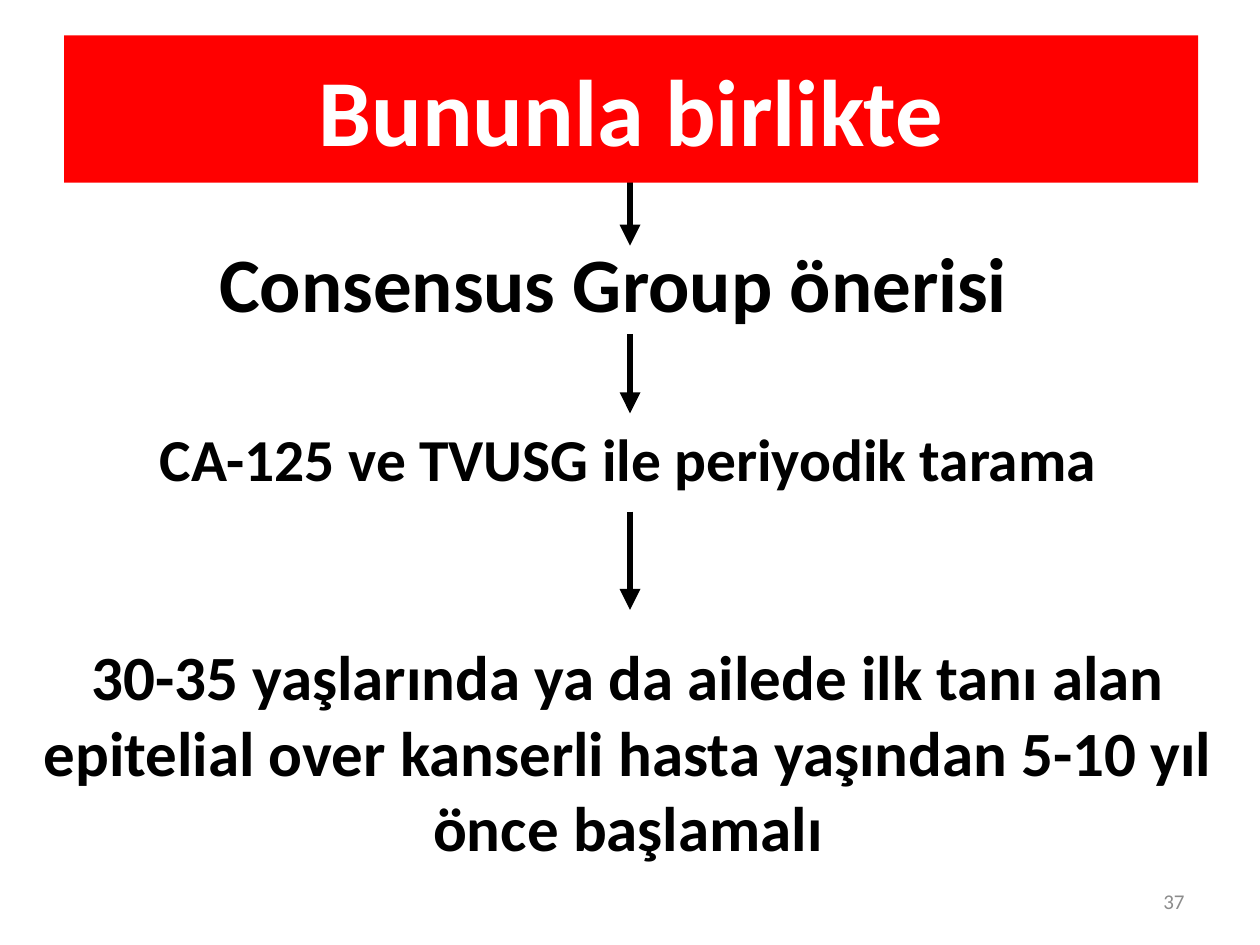
from lxml import etree
from pptx import Presentation
from pptx.dml.color import RGBColor
from pptx.enum.shapes import MSO_CONNECTOR as LINE
from pptx.enum.text import MSO_ANCHOR as ANCHOR, MSO_AUTO_SIZE as FIT, PP_ALIGN as ALIGN
from pptx.oxml.ns import qn
from pptx.util import Inches, Pt

RED = RGBColor(0xFF, 0, 0)
WHITE = RGBColor(0xFF, 0xFF, 0xFF)
BLACK = RGBColor(0, 0, 0)
GRAY = RGBColor(0x8C, 0x8C, 0x8C)

TITLE = "Bununla birlikte"
TITLE_BOX = (0.51, 0.28, 9, 1.17)
MID = 5  # x of the arrows
ARROWS = [(1.4, 1.95), (2.65, 3.28), (4.06, 4.84)]
# text, box, format
STEPS = [
    ("Consensus Group önerisi", (1.64, 1.82, 6.72, 0.84),
     dict(size=44, fit=FIT.SHAPE_TO_FIT_TEXT)),
    ("CA-125 ve TVUSG ile periyodik tarama", (1.17, 3.3, 7.72, 0.67),
     dict(size=34, wrap=False, fit=FIT.SHAPE_TO_FIT_TEXT)),
    ("30-35 yaşlarında ya da ailede ilk tanı alan epitelial over kanserli "
     "hasta yaşından 5-10 yıl önce başlamalı", (0.16, 5.01, 9.65, 1.92),
     dict(size=36, align=ALIGN.CENTER, fit=FIT.SHAPE_TO_FIT_TEXT)),
    ("37", (7.17, 6.95, 2.33, 0.4),
     dict(size=12, color=GRAY, bold=False, align=ALIGN.RIGHT, anchor=ANCHOR.MIDDLE)),
]


def write(shape, text, size, color=BLACK, bold=True, align=ALIGN.LEFT,
          anchor=ANCHOR.TOP, wrap=True, fit=FIT.NONE):
    frame = shape.text_frame
    frame.text = text
    frame.word_wrap = wrap
    frame.auto_size = fit
    frame.vertical_anchor = anchor
    para = frame.paragraphs[0]
    para.alignment = align
    font = para.runs[0].font
    font.name = "Calibri"
    font.size = Pt(size)
    font.bold = bold
    font.color.rgb = color


def add_arrow(shapes, top, end):
    arrow = shapes.add_connector(LINE.STRAIGHT, Inches(MID), Inches(top),
                                 Inches(MID), Inches(end))
    arrow.line.color.rgb = BLACK
    arrow.line.width = Pt(4)
    props = arrow.element.spPr
    etree.SubElement(props.find(qn("a:ln")), qn("a:tailEnd"), type="triangle")
    etree.SubElement(props, qn("a:effectLst"))


def main():
    deck = Presentation()
    deck.slide_width, deck.slide_height = Inches(10), Inches(7.5)
    shapes = deck.slides.add_slide(deck.slide_layouts[5]).shapes

    for top, end in ARROWS:
        add_arrow(shapes, top, end)

    title = shapes.title
    title.left, title.top, title.width, title.height = map(Inches, TITLE_BOX)
    title.fill.solid()
    title.fill.fore_color.rgb = RED
    write(title, TITLE, size=54, color=WHITE, align=ALIGN.CENTER, anchor=ANCHOR.MIDDLE)
    shapes.element.append(title.element)  # the bar covers the first arrow's start

    for text, box, style in STEPS:
        write(shapes.add_textbox(*map(Inches, box)), text, **style)

    deck.save("out.pptx")


if __name__ == "__main__":
    main()
